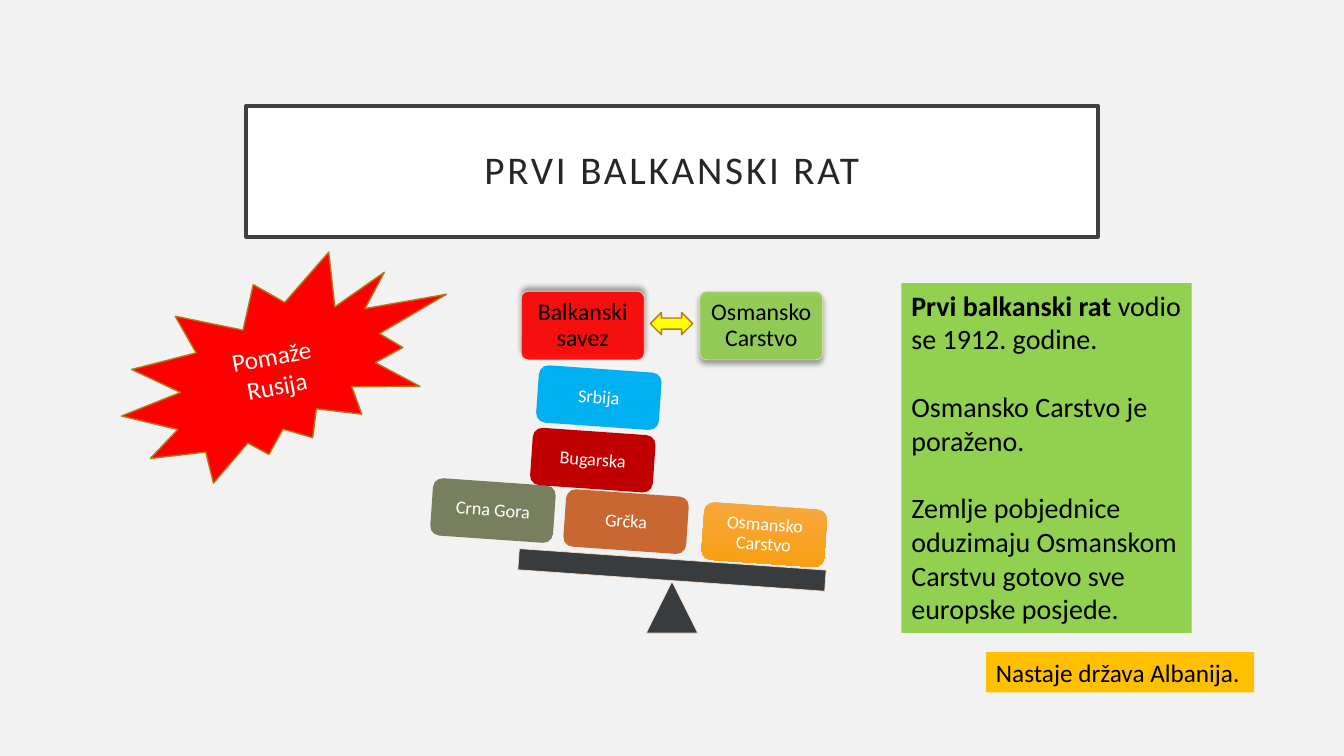
from dataclasses import dataclass

from lxml import etree
from pptx import Presentation
from pptx.dml.color import RGBColor
from pptx.enum.shapes import MSO_SHAPE
from pptx.enum.text import MSO_ANCHOR, MSO_AUTO_SIZE, PP_ALIGN
from pptx.oxml.ns import qn
from pptx.util import Inches, Pt

RECTANGLE = MSO_SHAPE.RECTANGLE
ROUNDED = MSO_SHAPE.ROUNDED_RECTANGLE
TRIANGLE = MSO_SHAPE.ISOSCELES_TRIANGLE
EXPLOSION = MSO_SHAPE.EXPLOSION2
DOUBLE_ARROW = MSO_SHAPE.LEFT_RIGHT_ARROW
CENTER, LEFT = PP_ALIGN.CENTER, PP_ALIGN.LEFT
MIDDLE, TOP = MSO_ANCHOR.MIDDLE, MSO_ANCHOR.TOP
GROW = MSO_AUTO_SIZE.SHAPE_TO_FIT_TEXT


@dataclass(frozen=True)
class Theme:
    font: str = "Calibri"
    background: str = "F2F2F2"
    white: str = "FFFFFF"
    black: str = "000000"
    title_text: str = "262626"
    title_border: str = "404040"
    red: str = "FF0000"
    green: str = "92D050"
    amber: str = "FFC000"
    yellow: str = "FFFF00"
    gold_border: str = "B67815"
    pale_border: str = "FBE0CD"
    scale: str = "25292B"
    blue: str = "00B0F0"
    dark_red: str = "C00000"
    olive: str = "777F5E"
    rust: str = "C96731"
    orange_top: str = "F7A942"
    orange_bottom: str = "F99E0F"
    title_size: float = 28
    panel_size: float = 20
    note_size: float = 18
    side_size: float = 17
    weight_size: float = 13


@dataclass(frozen=True)
class Side:
    name: str
    left: float
    fill: str
    shadow_angle: int


@dataclass(frozen=True)
class Weight:
    name: str
    left: float
    top: float
    fill: str
    fill_end: str = ""


THEME = Theme()
TILT = 4
SIDES = (
    Side("Balkanski savez", 5.17, THEME.red, 270),
    Side("Osmansko Carstvo", 6.94, THEME.green, 90),
)
WEIGHTS = (
    Weight("Osmansko Carstvo", 6.97, 5.02, THEME.orange_top, THEME.orange_bottom),
    Weight("Crna Gora", 4.28, 4.78, THEME.olive),
    Weight("Srbija", 5.33, 3.66, THEME.blue),
    Weight("Grčka", 5.6, 4.89, THEME.rust),
    Weight("Bugarska", 5.27, 4.28, THEME.dark_red),
)
FACTS = (
    (("Prvi balkanski rat ", True), ("vodio se 1912. godine.", False)),
    (("Osmansko Carstvo je poraženo.", False),),
    (("Zemlje pobjednice oduzimaju Osmanskom Carstvu gotovo sve europske posjede.", False),),
)


def add_box(slide, kind, left: float, top: float, width: float, height: float,
            fill: str, border: str = "", border_width: float = 0.5,
            rotation: float = 0, opacity: int = 100):
    """Add a preset shape with flat fill and an optional border."""
    shape = slide.shapes.add_shape(kind, Inches(left), Inches(top), Inches(width), Inches(height))
    shape.shadow.inherit = False
    shape.rotation = rotation
    shape.fill.solid()
    shape.fill.fore_color.rgb = RGBColor.from_string(fill)
    if border:
        shape.line.color.rgb = RGBColor.from_string(border)
        shape.line.width = Pt(border_width)
    else:
        shape.line.fill.background()
    if opacity < 100:
        for color in shape.element.spPr.iter(qn("a:srgbClr")):
            etree.SubElement(color, qn("a:alpha"), val=str(opacity * 1000))
    return shape


def add_shadow(shape, angle: int) -> None:
    """Cast a soft black shadow in the given direction."""
    effects = shape.element.spPr.find(qn("a:effectLst"))
    shadow = etree.SubElement(effects, qn("a:outerShdw"), blurRad=str(Pt(4)),
                              dist=str(Pt(3)), dir=str(angle * 60000), rotWithShape="0")
    color = etree.SubElement(shadow, qn("a:srgbClr"), val=THEME.black)
    etree.SubElement(color, qn("a:alpha"), val="40000")


def write_text(shape, text, *, size: float, color: str, align=CENTER, anchor=MIDDLE,
               margin: float | None = None, line_spacing: float = 1.0,
               gap: float = 0, tracking: float = 0, auto_size=None) -> None:
    """Write a string, or paragraphs made of (text, bold) runs."""
    paragraphs = (((text, False),),) if isinstance(text, str) else text
    frame = shape.text_frame
    frame.word_wrap = True
    frame.vertical_anchor = anchor
    if auto_size is not None:
        frame.auto_size = auto_size
    if margin is not None:
        frame.margin_left = frame.margin_right = Inches(margin)
        frame.margin_top = frame.margin_bottom = Inches(margin)
    for index, runs in enumerate(paragraphs):
        paragraph = frame.add_paragraph() if index else frame.paragraphs[0]
        paragraph.alignment = align
        paragraph.line_spacing = line_spacing
        if index and gap:
            paragraph.space_before = Pt(gap)
        for content, bold in runs:
            run = paragraph.add_run()
            run.text = content
            run.font.name = THEME.font
            run.font.size = Pt(size)
            run.font.bold = bold
            run.font.color.rgb = RGBColor.from_string(color)
            if tracking:
                run.font._element.set("spc", str(int(tracking * 100)))


def add_title(slide) -> None:
    title = add_box(slide, RECTANGLE, 2.44, 1.05, 8.45, 1.3, THEME.white, THEME.title_border, 2.5)
    write_text(title, "PRVI BALKANSKI RAT", size=THEME.title_size, color=THEME.title_text,
               margin=0.2, line_spacing=0.9, tracking=2)


def add_side(slide, side: Side) -> None:
    box = add_box(slide, ROUNDED, side.left, 2.89, 1.22, 0.68, side.fill,
                  THEME.pale_border, opacity=90)
    box.adjustments[0] = 0.1
    add_shadow(box, side.shadow_angle)
    write_text(box, side.name, size=THEME.side_size, color=THEME.black,
               margin=0.09, line_spacing=0.9)


def add_weight(slide, weight: Weight) -> None:
    box = add_box(slide, ROUNDED, weight.left, weight.top, 1.22, 0.57, weight.fill, rotation=TILT)
    if weight.fill_end:
        box.fill.gradient()
        box.fill.gradient_angle = 270
        for stop, color in zip(box.fill.gradient_stops, (weight.fill, weight.fill_end)):
            stop.color.rgb = RGBColor.from_string(color)
    write_text(box, weight.name, size=THEME.weight_size, color=THEME.white,
               margin=0.08, line_spacing=0.9)


def add_balance(slide) -> None:
    for side in SIDES:
        add_side(slide, side)
    # Pivot and tilted beam
    add_box(slide, TRIANGLE, 6.41, 5.77, 0.51, 0.51, THEME.scale, THEME.pale_border, opacity=90)
    add_box(slide, RECTANGLE, 5.14, 5.55, 3.05, 0.21, THEME.scale, THEME.pale_border,
            rotation=TILT, opacity=90)
    for weight in WEIGHTS:
        add_weight(slide, weight)


def add_notes_around(slide) -> None:
    # Burst on the left
    burst = add_box(slide, EXPLOSION, 1.14, 2.6, 3.39, 2.04, THEME.red,
                    THEME.gold_border, 1, rotation=349.3)
    write_text(burst, "Pomaže Rusija", size=THEME.note_size, color=THEME.white)
    # Facts on the right
    facts = add_box(slide, RECTANGLE, 8.94, 2.81, 2.88, 3.47, THEME.green)
    write_text(facts, FACTS, size=THEME.panel_size, color=THEME.black, align=LEFT,
               anchor=TOP, gap=24.4, auto_size=GROW)
    # Outcome below the facts
    outcome = add_box(slide, RECTANGLE, 9.78, 6.47, 2.66, 0.4, THEME.amber)
    write_text(outcome, "Nastaje država Albanija.", size=THEME.note_size, color=THEME.black,
               align=LEFT, anchor=TOP, auto_size=GROW)
    # Arrow between the two sides
    add_box(slide, DOUBLE_ARROW, 6.45, 3.1, 0.42, 0.22, THEME.yellow, THEME.gold_border, 1)


def main() -> None:
    presentation = Presentation()
    presentation.slide_width = Inches(13.33)
    presentation.slide_height = Inches(7.5)
    slide = presentation.slides.add_slide(presentation.slide_layouts[6])
    slide.background.fill.solid()
    slide.background.fill.fore_color.rgb = RGBColor.from_string(THEME.background)
    add_title(slide)
    add_balance(slide)
    add_notes_around(slide)
    presentation.save("out.pptx")


if __name__ == "__main__":
    main()
